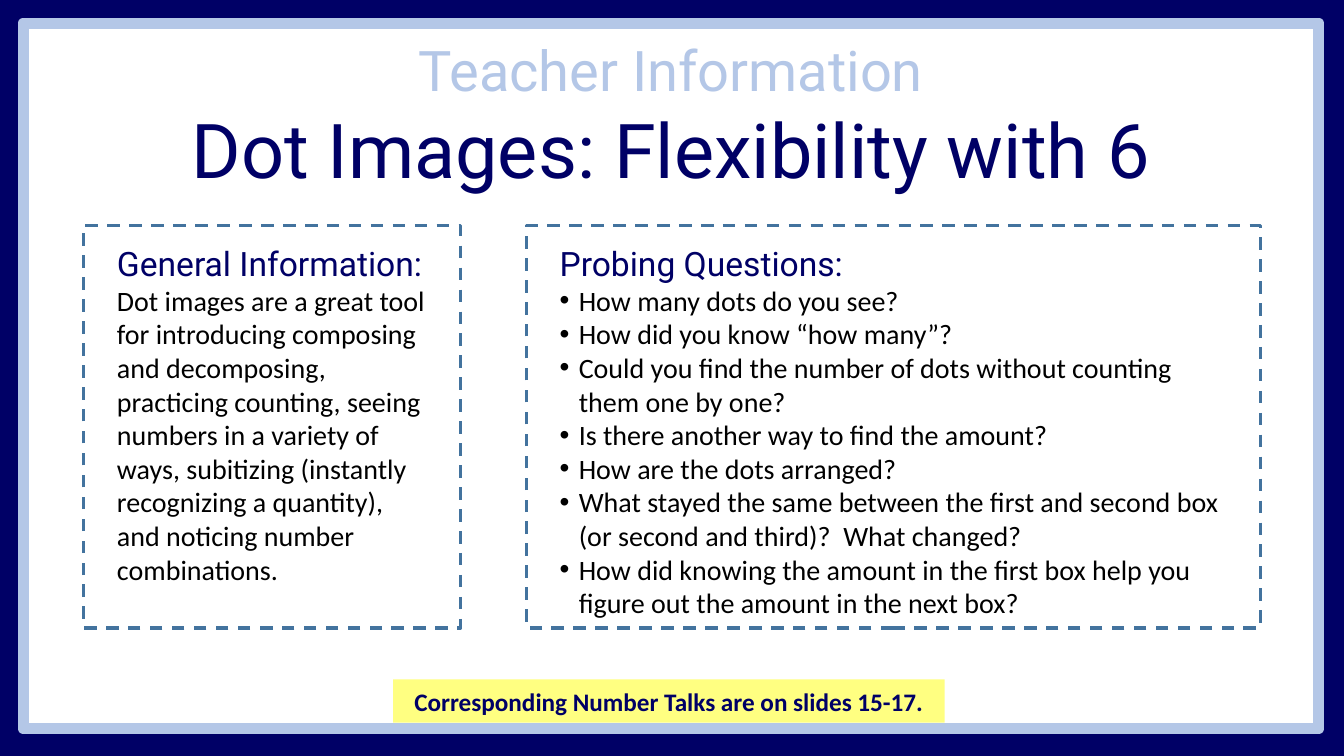
from dataclasses import dataclass

from lxml import etree
from pptx import Presentation
from pptx.dml.color import RGBColor
from pptx.enum.dml import MSO_LINE
from pptx.enum.shapes import MSO_SHAPE
from pptx.enum.text import MSO_ANCHOR, MSO_AUTO_SIZE, PP_ALIGN
from pptx.oxml.ns import qn
from pptx.util import Pt

RECTANGLE = MSO_SHAPE.RECTANGLE
DASH = MSO_LINE.DASH
TOP, MIDDLE = MSO_ANCHOR.TOP, MSO_ANCHOR.MIDDLE
LEFT, CENTER = PP_ALIGN.LEFT, PP_ALIGN.CENTER
NO_AUTOFIT = MSO_AUTO_SIZE.NONE
EMU_PER_PX = 9144
TWO_CONTENT_LAYOUT = 3
BULLET_INDENT = 19


@dataclass(frozen=True)
class Theme:
    """Colours, fonts and type sizes of the slide."""
    navy: str = "000066"
    pale_blue: str = "B4C7E7"
    steel_blue: str = "43739E"
    yellow: str = "FFFF81"
    white: str = "FFFFFF"
    black: str = "000000"
    heading_font: str = "Roboto"
    body_font: str = "Calibri"
    overline_size: int = 40
    title_size: int = 54
    heading_size: int = 24
    body_size: int = 20
    note_size: int = 18


THEME = Theme()
GENERAL_INFORMATION = [
    "Dot images are a great tool for introducing composing and decomposing, "
    "practicing counting, seeing numbers in a variety of ways, subitizing "
    "(instantly recognizing a quantity), and noticing number combinations.",
]
PROBING_QUESTIONS = [
    "How many dots do you see?",
    "How did you know “how many”?",
    "Could you find the number of dots without counting them one by one?",
    "Is there another way to find the amount?",
    "How are the dots arranged?",
    "What stayed the same between the first and second box "
    "(or second and third)?  What changed?",
    "How did knowing the amount in the first box help you "
    "figure out the amount in the next box?",
]


def px(length):
    """Turn a length in px into EMU."""
    return length * EMU_PER_PX


def place(shape, box):
    """Move and size a shape to a left, top, width, height box in px."""
    shape.left, shape.top, shape.width, shape.height = map(px, box)


def add_box(slide, box, fill=None, line=None, line_width=1.0, dash=None):
    """Add a flat rectangle with an optional fill and outline."""
    shape = slide.shapes.add_shape(RECTANGLE, *map(px, box))
    shape.shadow.inherit = False
    if fill:
        shape.fill.solid()
        shape.fill.fore_color.rgb = RGBColor.from_string(fill)
    else:
        shape.fill.background()
    if line:
        shape.line.color.rgb = RGBColor.from_string(line)
        shape.line.width = Pt(line_width)
        shape.line.dash_style = dash
    else:
        shape.line.fill.background()
    return shape


def prepare_text(shape, anchor):
    """Clear a text frame, set its layout and return it."""
    frame = shape.text_frame
    frame.clear()
    frame.word_wrap = True
    frame.auto_size = NO_AUTOFIT
    frame.vertical_anchor = anchor
    frame.margin_left = frame.margin_right = px(10)
    frame.margin_top = frame.margin_bottom = px(5)
    return frame


def write_paragraph(paragraph, text, font, size, color, bold=False, align=LEFT):
    """Write one run into a paragraph without extra spacing."""
    paragraph.alignment = align
    paragraph.space_before = paragraph.space_after = Pt(0)
    paragraph.line_spacing = 1.0
    run = paragraph.add_run()
    run.text = text
    run.font.name = font
    run.font.size = Pt(size)
    run.font.bold = bold
    run.font.color.rgb = RGBColor.from_string(color)


def set_bullet(paragraph, bulleted):
    """Give a paragraph a hanging bullet or remove the inherited one."""
    properties = paragraph._p.get_or_add_pPr()
    indent = px(BULLET_INDENT) if bulleted else 0
    properties.set("marL", str(indent))
    properties.set("indent", str(-indent))
    if bulleted:
        font = etree.SubElement(properties, qn("a:buFont"))
        font.set("typeface", "Arial")
        etree.SubElement(properties, qn("a:buChar")).set("char", "•")
    else:
        etree.SubElement(properties, qn("a:buNone"))


def fill_title(title, box):
    """Write the two title lines into the title placeholder."""
    place(title, box)
    frame = prepare_text(title, TOP)
    write_paragraph(frame.paragraphs[0], "Teacher Information", THEME.heading_font,
                    THEME.overline_size, THEME.pale_blue, align=CENTER)
    write_paragraph(frame.add_paragraph(), "Dot Images: Flexibility with 6",
                    THEME.heading_font, THEME.title_size, THEME.navy, align=CENTER)


def fill_panel(slide, placeholder, text_box, border_box, heading, items, bulleted):
    """Write a headed panel into a body placeholder and add its dashed border."""
    place(placeholder, text_box)
    frame = prepare_text(placeholder, TOP)
    write_paragraph(frame.paragraphs[0], heading, THEME.heading_font,
                    THEME.heading_size, THEME.navy)
    set_bullet(frame.paragraphs[0], False)
    for item in items:
        paragraph = frame.add_paragraph()
        write_paragraph(paragraph, item, THEME.body_font, THEME.body_size, THEME.black)
        set_bullet(paragraph, bulleted)
    add_box(slide, border_box, line=THEME.steel_blue, line_width=2.25, dash=DASH)


def add_note(slide, box, text):
    """Add the highlighted note at the foot of the slide."""
    note = add_box(slide, box, fill=THEME.yellow)
    frame = prepare_text(note, MIDDLE)
    write_paragraph(frame.paragraphs[0], text, THEME.body_font, THEME.note_size,
                    THEME.navy, bold=True, align=CENTER)


def main():
    """Build the slide and save it."""
    presentation = Presentation()
    presentation.slide_width, presentation.slide_height = px(1333), px(750)
    layout = presentation.slide_layouts[TWO_CONTENT_LAYOUT]
    slide = presentation.slides.add_slide(layout)
    slide.background.fill.solid()
    slide.background.fill.fore_color.rgb = RGBColor.from_string(THEME.navy)

    page = add_box(slide, (23, 23, 1285, 700), THEME.white, THEME.pale_blue, 8)
    slide.shapes._spTree.insert(2, page._element)

    title, general, probing = slide.placeholders
    fill_title(title, (23, 30, 1285, 168))
    fill_panel(slide, general, (106, 236, 329, 353), (83, 224, 374, 399),
               "General Information:", GENERAL_INFORMATION, False)
    fill_panel(slide, probing, (545, 236, 688, 387), (522, 224, 728, 399),
               "Probing Questions:", PROBING_QUESTIONS, True)
    add_note(slide, (390, 674, 547, 43),
             "Corresponding Number Talks are on slides 15-17.")
    presentation.save("out.pptx")


if __name__ == "__main__":
    main()
